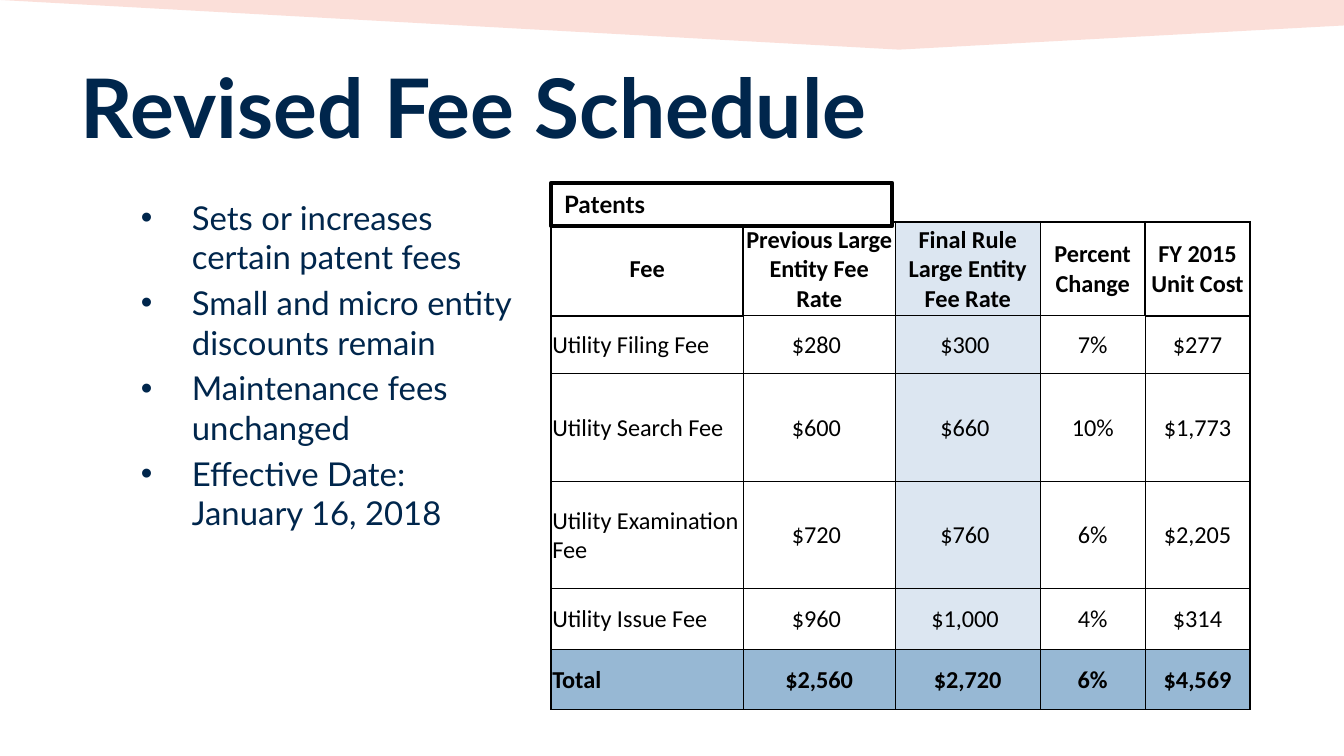
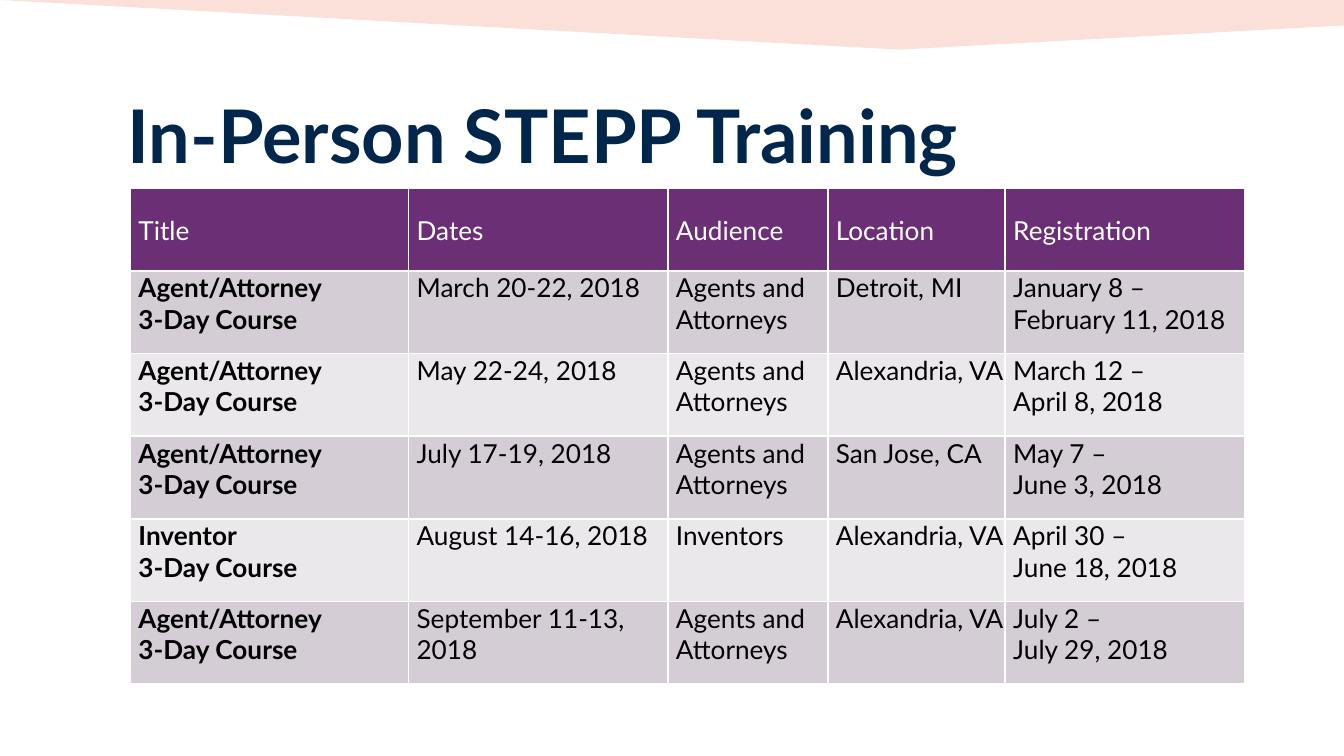
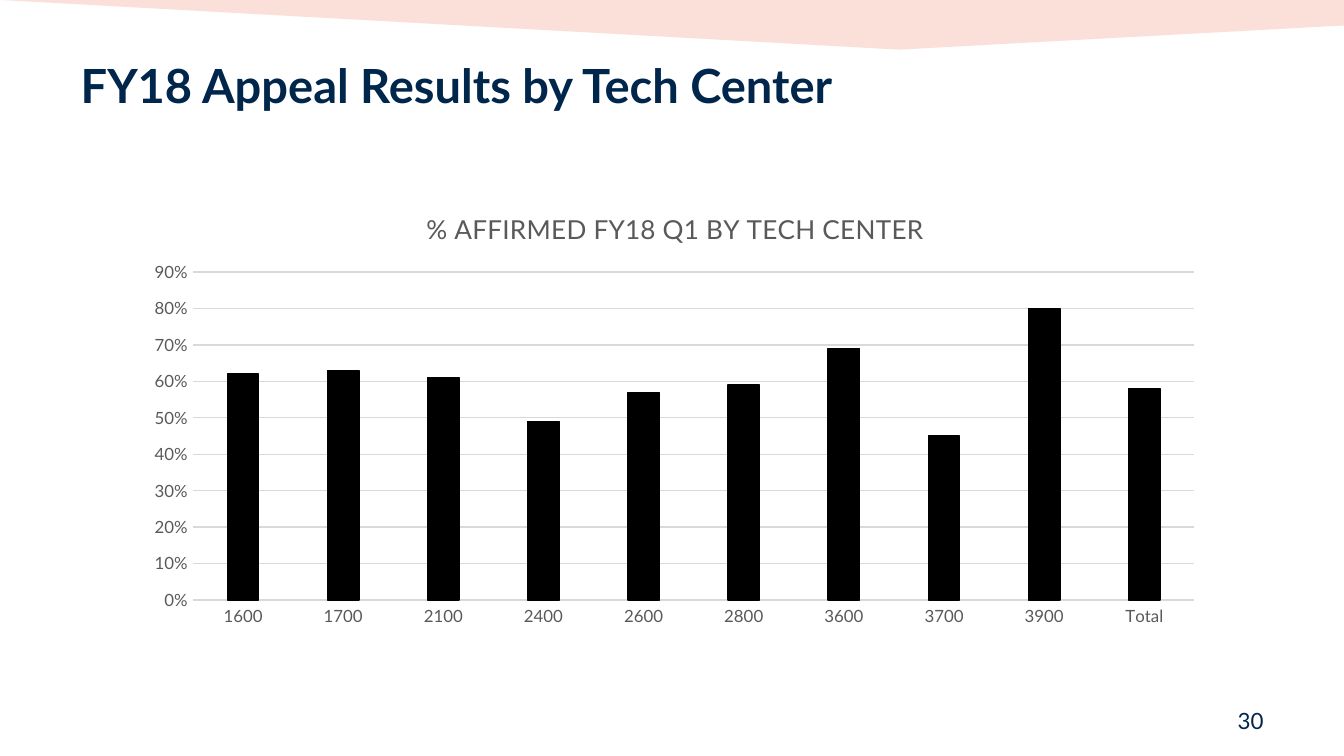
from dataclasses import dataclass
from lxml.etree import SubElement
from pptx import Presentation
from pptx.chart.data import CategoryChartData as ChartData
from pptx.dml.color import RGBColor as RGB
from pptx.enum.chart import XL_CHART_TYPE as CHART, XL_TICK_MARK as TICK
from pptx.enum.shapes import MSO_SHAPE as SHAPE
from pptx.enum.text import MSO_ANCHOR as ANCHOR, MSO_AUTO_SIZE as FIT, PP_ALIGN as ALIGN
from pptx.oxml import parse_xml
from pptx.oxml.ns import nsdecls, qn
from pptx.util import Inches, Pt


@dataclass(frozen=True)
class Theme:
    """Colours, fonts and type sizes of the deck."""
    navy: str = "00264C"
    coral: str = "EA2D00"
    black: str = "000000"
    white: str = "FFFFFF"
    tint: str = "DCE6F1"
    blue: str = "97B8D4"
    plum: str = "6B2F75"
    mauve: str = "D4CDD6"
    pale: str = "EBE8EC"
    gray: str = "595959"
    rule: str = "D9D9D9"
    font: str = "Lato"
    fees: str = "Calibri"
    big: float = 44
    mid: float = 39.6
    small: float = 25.2
    body: float = 17.6
    label: float = 12.8
    fee: float = 13
    course: float = 14
    head: float = 14
    chart: float = 10
    axis: float = 9
    page: float = 12


T = Theme()
SIDES = {"L": (0, -1), "R": (0, 1), "T": (-1, 0), "B": (1, 0)}

POINTS = (
    "Sets or increases certain patent fees",
    "Small and micro entity discounts remain",
    "Maintenance fees unchanged",
    "Effective Date: January 16, 2018",
)
FEES = (
    ("Fee", "Previous Large Entity Fee Rate", "Final Rule Large Entity Fee Rate",
     "Percent Change", "FY 2015 Unit Cost"),
    ("Utility Filing Fee", "$280 ", "$300 ", "7%", "$277"),
    ("Utility Search Fee", "$600 ", "$660 ", "10%", "$1,773"),
    ("Utility Examination Fee", "$720 ", "$760 ", "6%", "$2,205"),
    ("Utility Issue Fee", "$960 ", "$1,000 ", "4%", "$314"),
    ("Total", "$2,560", "$2,720", "6%", "$4,569"),
)
AGENT, BOTH = "Agent/Attorney \v3-Day Course", "Agents and Attorneys"
COURSES = (
    ("Title", "Dates", "Audience", "Location", "Registration"),
    (AGENT, "March 20-22, 2018", BOTH, "Detroit, MI", "January 8 –\nFebruary 11, 2018"),
    (AGENT, "May 22-24, 2018", BOTH, "Alexandria, VA", "March 12 –\nApril 8, 2018"),
    (AGENT, "July 17-19, 2018", BOTH, "San Jose, CA", "May 7 –\nJune 3, 2018"),
    ("Inventor \v3-Day Course", "August 14-16, 2018", "Inventors", "Alexandria, VA",
     "April 30 –\nJune 18, 2018"),
    (AGENT, "September 11-13, 2018", BOTH, "Alexandria, VA", "July 2 –\nJuly 29, 2018"),
)
RATES = {"1600": 0.62, "1700": 0.63, "2100": 0.61, "2400": 0.49, "2600": 0.57,
         "2800": 0.59, "3600": 0.69, "3700": 0.45, "3900": 0.8, "Total": 0.58}


def style(font, size, color, bold=False, name=T.font):
    """Set the look of a font."""
    font.size, font.bold, font.name = Pt(size), bold, name
    font.color.rgb = RGB.from_string(color)


def paint(fill, color):
    """Fill with a colour, or with nothing."""
    if color:
        fill.solid()
        fill.fore_color.rgb = RGB.from_string(color)
    else:
        fill.background()


def stroke(line, color, width):
    """Set the colour and width of a line."""
    line.color.rgb = RGB.from_string(color)
    line.width = Pt(width)


def add_band(slide):
    """Draw the top band and hand it to the slide master."""
    pen = slide.shapes.build_freeform(0, 0)
    pen.add_line_segments([(Inches(x), Inches(y)) for x, y in ((10, 0), (10, 0.19), (6.69, 0.37))])
    band = pen.convert_to_shape()
    band.shadow.inherit = False
    band.line.fill.background()
    paint(band.fill, T.coral)
    tone = band.element.spPr.find(".//" + qn("a:srgbClr"))
    SubElement(tone, qn("a:alpha")).set("val", "15000")
    band.element.nvSpPr.cNvPr.set("id", "99")
    slide.slide_layout.slide_master.shapes.element.insert(2, band.element)


def add_page(deck, text, box, size):
    """Add a slide with its title in the given box."""
    slide = deck.slides.add_slide(deck.slide_layouts[5])
    title = slide.shapes.title
    title.left, title.top, title.width, title.height = map(Inches, box)
    frame = title.text_frame
    frame.text, frame.word_wrap = text, True
    frame.auto_size, frame.vertical_anchor = FIT.NONE, ANCHOR.TOP
    frame.paragraphs[0].alignment = ALIGN.LEFT
    style(frame.paragraphs[0].font, size, T.navy, True)
    return slide


def add_list(slide, box, items):
    """Add a bulleted list."""
    frame = slide.shapes.add_textbox(*map(Inches, box)).text_frame
    frame.word_wrap, frame.text = True, "\n".join(items)
    for i, para in enumerate(frame.paragraphs):
        props = para._p.get_or_add_pPr()
        props.set("marL", str(Inches(0.38)))
        props.set("indent", str(-Inches(0.38)))
        SubElement(props, qn("a:buFont")).set("typeface", "Arial")
        SubElement(props, qn("a:buChar")).set("char", "•")
        para.space_before = Pt(3.5 if i else 0)
        style(para.font, T.body, T.navy)


def add_edge(cell, side, color, width):
    """Draw one border of a cell."""
    props = cell._tc.get_or_add_tcPr()
    props.append(parse_xml(
        f'<a:ln{side} {nsdecls("a")} w="{Pt(width)}"><a:solidFill>'
        f'<a:srgbClr val="{color}"/></a:solidFill></a:ln{side}>'))


def add_grid(slide, box, data, cols, rows, look):
    """Add a table and format each cell with look."""
    grid = slide.shapes.add_table(len(rows), len(cols), *map(Inches, box)).table
    grid.first_row = grid.horz_banding = False
    for col, width in zip(grid.columns, cols):
        col.width = Inches(width)
    for r, (line, height) in enumerate(zip(data, rows)):
        grid.rows[r].height = Inches(height)
        for c, text in enumerate(line):
            cell = grid.cell(r, c)
            cell.text = text
            cell.margin_left = cell.margin_right = cell.margin_top = Inches(0.01)
            cell.margin_bottom = 0
            look(cell, r, c)


def fee_look(cell, r, c):
    """Format a cell of the fee table."""
    last, end = len(FEES) - 1, len(FEES[0]) - 1
    heads = {(0, 0), (0, end)}
    for side, (down, over) in SIDES.items():
        y, x = r + down, c + over
        outer = not (0 <= y <= last and 0 <= x <= end)
        add_edge(cell, side, T.black, 1 if outer or heads & {(r, c), (y, x)} else 0.5)
    plain = (None, T.white if r else None, T.tint, None, None)
    paint(cell.fill, T.blue if r == last else plain[c])
    cell.vertical_anchor = ANCHOR.MIDDLE
    para = cell.text_frame.paragraphs[0]
    para.alignment = ALIGN.LEFT if r and not c else ALIGN.CENTER
    style(para.font, T.fee, T.black, r in (0, last), T.fees)


def course_look(cell, r, c):
    """Format a cell of the course table."""
    for side in SIDES:
        add_edge(cell, side, T.white, 1)
    paint(cell.fill, (T.mauve if r % 2 else T.pale) if r else T.plum)
    cell.margin_left, cell.margin_right = Inches(0.06), 0
    cell.vertical_anchor = ANCHOR.TOP if r else ANCHOR.MIDDLE
    for para in cell.text_frame.paragraphs:
        style(para.font, T.course, T.black if r else T.white, bool(r) and c == 0)


def add_label(slide, box, text):
    """Add the outlined label above the fee table."""
    label = slide.shapes.add_shape(SHAPE.RECTANGLE, *map(Inches, box))
    label.shadow.inherit = False
    paint(label.fill, T.white)
    stroke(label.line, T.black, 2)
    label.text_frame.text = text
    para = label.text_frame.paragraphs[0]
    para.alignment = ALIGN.LEFT
    style(para.font, T.label, T.black, True)


def place(part, index, **spots):
    """Fix a chart part at fractions of the chart."""
    layout = part.find(qn("c:layout"))
    if layout is not None:
        part.remove(layout)
    layout = part.makeelement(qn("c:layout"))
    part.insert(index, layout)
    manual = SubElement(layout, qn("c:manualLayout"))
    if "w" in spots:
        SubElement(manual, qn("c:layoutTarget")).set("val", "inner")
    for key in "xy":
        SubElement(manual, qn(f"c:{key}Mode")).set("val", "edge")
    for key, val in spots.items():
        SubElement(manual, qn(f"c:{key}")).set("val", str(val))


def add_bars(slide, box, title, rates):
    """Add the column chart of rates."""
    data = ChartData(number_format="0%")
    data.categories = list(rates)
    data.add_series("Series 1", list(rates.values()))
    chart = slide.shapes.add_chart(CHART.COLUMN_CLUSTERED, *map(Inches, box), data).chart
    chart.has_legend = False
    style(chart.font, T.chart, T.black)
    head = chart.chart_title
    head.include_in_layout = False
    head.text_frame.text = title
    style(head.text_frame.paragraphs[0].font, T.head, T.gray)
    root = chart.element
    place(root.find(".//" + qn("c:title")), 1, x=0.27, y=0.03)
    place(root.find(".//" + qn("c:plotArea")), 0, x=0.06, y=0.18, w=0.92, h=0.74)
    plot = chart.plots[0]
    plot.gap_width, plot.overlap, plot.vary_by_categories = 219, -27, False
    bars = plot.series[0].format
    paint(bars.fill, T.black)
    stroke(bars.line, T.black, 0.75)
    cats, vals = chart.category_axis, chart.value_axis
    for axis in (cats, vals):
        axis.major_tick_mark = axis.minor_tick_mark = TICK.NONE
        style(axis.tick_labels.font, T.axis, T.gray)
    stroke(cats.format.line, T.rule, 0.75)
    vals.format.line.fill.background()
    vals.minimum_scale, vals.maximum_scale, vals.major_unit = 0, 0.9, 0.1
    vals.tick_labels.number_format = "0%"
    vals.tick_labels.number_format_is_linked = False
    stroke(vals.major_gridlines.format.line, T.rule, 0.75)


def add_number(slide, box, text):
    """Add the page number."""
    frame = slide.shapes.add_textbox(*map(Inches, box)).text_frame
    frame.text, frame.word_wrap = text, True
    frame.vertical_anchor = ANCHOR.MIDDLE
    frame.paragraphs[0].alignment = ALIGN.RIGHT
    style(frame.paragraphs[0].font, T.page, T.navy)


def main():
    """Build the deck and save it."""
    deck = Presentation()
    deck.slide_width, deck.slide_height = Inches(10), Inches(10 * 9 / 16)
    top = (0.5, 0.37, 9, 0.87)

    fees = add_page(deck, "Revised Fee Schedule", top, T.big)
    add_band(fees)
    add_list(fees, (0.95, 1.42, 3, 3.3), POINTS)
    add_grid(fees, (4.1, 1.65, 5.19, 3.63), FEES, (1.43, 1.13, 1.08, 0.78, 0.78),
             (0.7, 0.43, 0.8, 0.8, 0.45, 0.45), fee_look)
    add_label(fees, (4.1, 1.36, 2.54, 0.32), "Patents")

    training = add_page(deck, "In-Person STEPP Training", (0.85, 0.62, 8.1, 0.78), T.mid)
    add_grid(training, (0.97, 1.4, 8.29, 3.69), COURSES, (2.07, 1.93, 1.19, 1.32, 1.78),
             [3.69 / len(COURSES)] * len(COURSES), course_look)

    appeals = add_page(deck, "FY18 Appeal Results by Tech Center", top, T.small)
    add_bars(appeals, (0.95, 1.43, 8.1, 3.3), "% AFFIRMED FY18 Q1 BY TECH CENTER", RATES)
    add_number(appeals, (7.17, 5.21, 2.33, 0.3), "30")
    deck.save("out.pptx")


if __name__ == "__main__":
    main()
